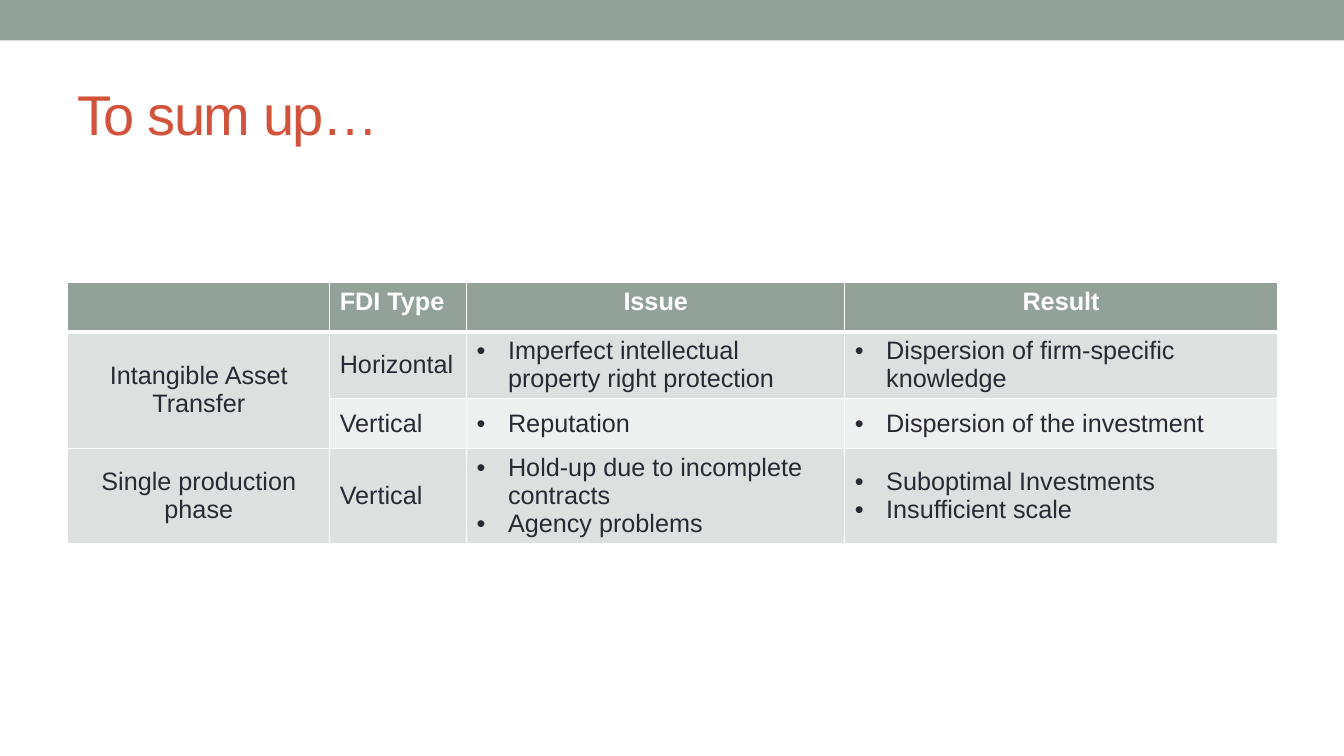
from lxml import etree
from pptx import Presentation
from pptx.dml.color import RGBColor
from pptx.enum.shapes import MSO_SHAPE
from pptx.enum.text import MSO_ANCHOR, PP_ALIGN
from pptx.oxml.ns import qn
from pptx.util import Cm, Pt

RECT = MSO_SHAPE.RECTANGLE
TOP, MID = MSO_ANCHOR.TOP, MSO_ANCHOR.MIDDLE
LEFT, CENTER = PP_ALIGN.LEFT, PP_ALIGN.CENTER

FONT = "Arial"
TINT = {
    "sage": "93A299",
    "red": "D2533C",
    "ink": "292934",
    "white": "FFFFFF",
    "dark": "DCE0DE",
    "light": "EEF0EF",
}
WIDTHS = [6.6, 3.45, 9.53, 10.9]
HEIGHTS = [1.25, 1.65, 1.26, 2.4]
BANDS = ["sage", "dark", "light", "dark"]
ROWS = [
    ["", "FDI Type", "Issue", "Result"],
    ["Intangible Asset Transfer", "Horizontal",
     "Imperfect intellectual property right protection",
     "Dispersion of firm-specific knowledge"],
    ["", "Vertical", "Reputation", "Dispersion of the investment"],
    ["Single production phase", "Vertical",
     "Hold-up due to incomplete contracts\nAgency problems",
     "Suboptimal Investments\nInsufficient scale"],
]


def color(name):
    return RGBColor.from_string(TINT[name])


def style(para, size, tint, align, bold=False):
    para.alignment = align
    for run in para.runs:
        font = run.font
        font.name, font.size, font.bold = FONT, Pt(size), bold
        font.color.rgb = color(tint)


def add_bar(slide, width):
    bar = slide.shapes.add_shape(RECT, 0, 0, width, Cm(1.02))
    bar.shadow.inherit = False
    bar.fill.solid()
    bar.fill.fore_color.rgb = color("sage")
    bar.line.fill.background()


def set_title(slide, text):
    title = slide.shapes.title
    title.left, title.top = Cm(1.69), Cm(1.48)
    title.width, title.height = Cm(30.48), Cm(2.75)
    frame = title.text_frame
    frame.text = text
    frame.vertical_anchor = MID
    para = frame.paragraphs[0]
    style(para, 40, "red", LEFT)
    para.runs[0].font._element.set("spc", "-100")


def add_bullet(para):
    props = para._p.get_or_add_pPr()
    props.set("marL", str(Cm(0.79)))
    props.set("indent", str(-Cm(0.79)))
    etree.SubElement(props, qn("a:buFont")).set("typeface", FONT)
    etree.SubElement(props, qn("a:buChar")).set("char", "•")


def set_edges(cell, base):
    # Edge lines come before the fill in the cell properties
    props = cell._tc.get_or_add_tcPr()
    edges = {"a:lnL": 1, "a:lnR": 1, "a:lnT": 1, "a:lnB": base}
    for spot, (tag, width) in enumerate(edges.items()):
        line = etree.Element(qn(tag), w=str(Pt(width)))
        fill = etree.SubElement(line, qn("a:solidFill"))
        etree.SubElement(fill, qn("a:srgbClr")).set("val", TINT["white"])
        props.insert(spot, line)


def fill_cell(cell, text, row, col):
    head = row == 0
    cell.fill.solid()
    cell.fill.fore_color.rgb = color(BANDS[row])
    set_edges(cell, 3 if head else 1)
    cell.vertical_anchor = TOP if head else MID
    cell.text_frame.text = text
    mid = col == 0 or (head and col > 1)
    for para in cell.text_frame.paragraphs:
        style(para, 18, "white" if head else "ink",
              CENTER if mid else LEFT, head)
        if not head and col > 1:
            add_bullet(para)


def add_grid(slide):
    frame = slide.shapes.add_table(
        len(ROWS), len(WIDTHS), Cm(1.71), Cm(7.11),
        Cm(sum(WIDTHS)), Cm(sum(HEIGHTS)))
    table = frame.table
    for col, width in zip(table.columns, WIDTHS):
        col.width = Cm(width)
    for row, height in zip(table.rows, HEIGHTS):
        row.height = Cm(height)
    for r, texts in enumerate(ROWS):
        for c, text in enumerate(texts):
            fill_cell(table.cell(r, c), text, r, c)
    # The asset transfer label covers both FDI types
    table.cell(1, 0).merge(table.cell(2, 0))


def main():
    deck = Presentation()
    deck.slide_width, deck.slide_height = Cm(33.87), Cm(19.05)
    slide = deck.slides.add_slide(deck.slide_layouts[5])
    add_bar(slide, deck.slide_width)
    set_title(slide, "To sum up…")
    add_grid(slide)
    deck.save("out.pptx")


if __name__ == "__main__":
    main()
